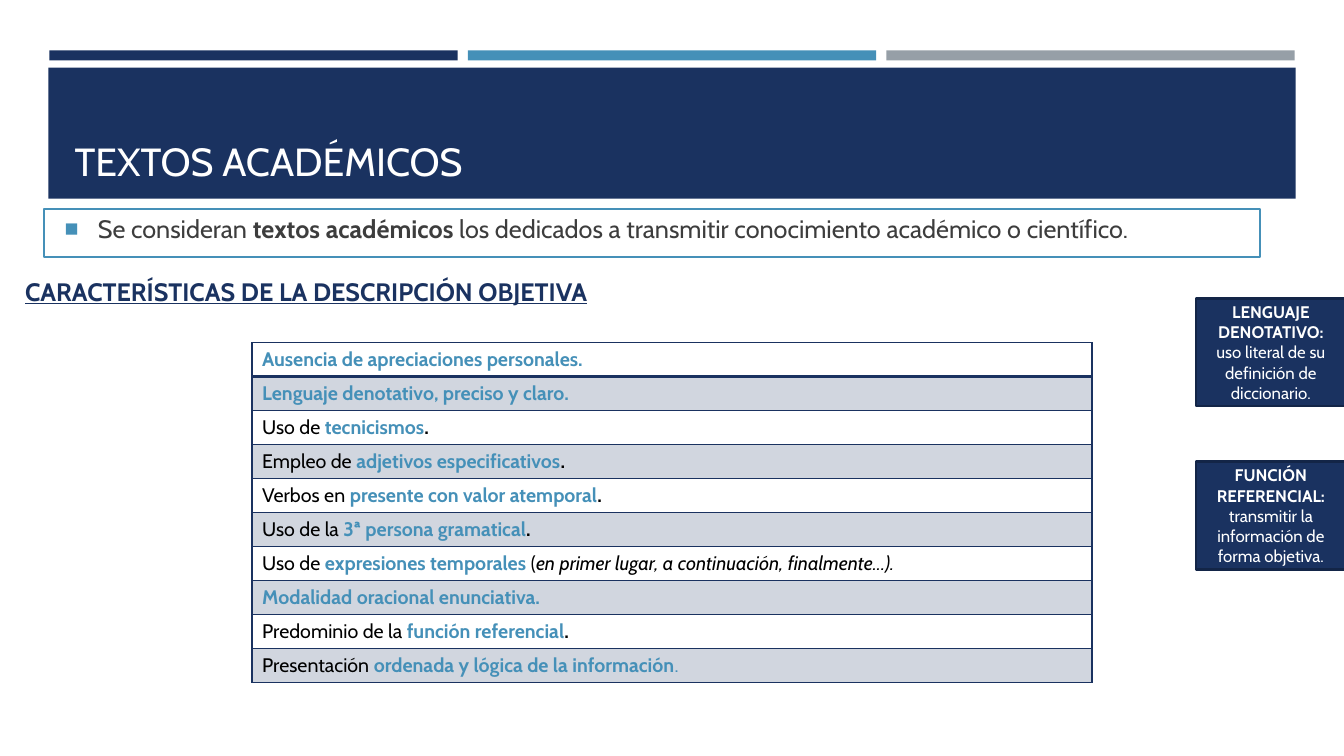
from lxml import etree
from pptx import Presentation
from pptx.dml.color import RGBColor
from pptx.enum.shapes import MSO_SHAPE as Shape
from pptx.enum.text import MSO_ANCHOR as Anchor, MSO_AUTO_SIZE as AutoSize, PP_ALIGN as Align
from pptx.oxml.ns import qn
from pptx.util import Inches, Pt

NAVY = RGBColor(0x1A, 0x32, 0x60)
DARK_NAVY = RGBColor(0x13, 0x25, 0x47)
BLUE = RGBColor(0x45, 0x90, 0xB8)
GRAY = RGBColor(0x96, 0x9F, 0xA7)
BAND = RGBColor(0xD1, 0xD6, 0xDF)
TEXT = RGBColor(0x3D, 0x3D, 0x3D)
BLACK = RGBColor(0, 0, 0)
WHITE = RGBColor(0xFF, 0xFF, 0xFF)

# Table wording: each run is (text, style name)
STYLES = {
    "plain": dict(color=BLACK),
    "key": dict(color=BLUE, bold=True),
    "stop": dict(color=BLACK, bold=True),
    "example": dict(color=BLACK, italic=True),
    "light": dict(color=BLUE),
}
FEATURES = [
    [("Ausencia de apreciaciones personales.", "key")],
    [("Lenguaje denotativo, preciso y claro.", "key")],
    [("Uso de ", "plain"), ("tecnicismos", "key"), (".", "stop")],
    [("Empleo de ", "plain"), ("adjetivos especificativos", "key"), (".", "stop")],
    [("Verbos en ", "plain"), ("presente con valor atemporal", "key"), (".", "stop")],
    [("Uso de la ", "plain"), ("3ª persona gramatical", "key"), (".", "stop")],
    [("Uso de ", "plain"), ("expresiones temporales ", "key"), ("(", "plain"),
     ("en primer lugar, a continuación, finalmente...).", "example")],
    [("Modalidad oracional enunciativa.", "key")],
    [("Predominio de la ", "plain"), ("función referencial", "key"), (".", "stop")],
    [("Presentación ", "plain"), ("ordenada y lógica de la información", "key"), (".", "light")],
]
CALLOUTS = [
    ("LENGUAJE DENOTATIVO:", " uso literal de su definición de diccionario."),
    ("FUNCIÓN REFERENCIAL:", " transmitir la información de forma objetiva."),
]


def add_text(paragraph, text, size=14, color=BLACK, bold=False, italic=False,
             underline=False, font="Cabin"):
    run = paragraph.add_run()
    run.text = text
    run.font.name = font
    run.font.size = Pt(size)
    run.font.color.rgb = color
    run.font.bold = bold
    run.font.italic = italic
    run.font.underline = underline


class SlideBuilder:
    def __init__(self, slide):
        self.slide = slide
        self.shapes = slide.shapes

    def shape(self, box, kind=Shape.RECTANGLE, fill=None, line=None, width=1.5):
        shape = self.shapes.add_shape(kind, *map(Inches, box))
        shape.shadow.inherit = False
        if fill is None:
            shape.fill.background()
        else:
            shape.fill.solid()
            shape.fill.fore_color.rgb = fill
        if line is None:
            shape.line.fill.background()
        else:
            shape.line.color.rgb = line
            shape.line.width = Pt(width)
        return shape

    def placeholder(self, index, box, anchor):
        """Place a placeholder above the shapes drawn so far."""
        shape = self.slide.placeholders[index]
        shape.left, shape.top, shape.width, shape.height = map(Inches, box)
        frame = shape.text_frame
        frame.word_wrap = True
        frame.auto_size = AutoSize.NONE
        frame.vertical_anchor = anchor
        self.shapes._spTree.append(shape._element)
        paragraph = frame.paragraphs[0]
        paragraph.alignment = Align.LEFT
        return paragraph

    def bullet(self, paragraph, indent, color):
        properties = paragraph._p.get_or_add_pPr()
        properties.set("marL", str(Inches(indent)))
        properties.set("indent", str(-Inches(indent)))
        bullet_color = etree.SubElement(properties, qn("a:buClr"))
        etree.SubElement(bullet_color, qn("a:srgbClr"), val=str(color))
        etree.SubElement(properties, qn("a:buSzPct"), val="92000")
        etree.SubElement(properties, qn("a:buFont"), typeface="Arial")
        etree.SubElement(properties, qn("a:buChar"), char="■")

    def heading(self, box, text):
        frame = self.shapes.add_textbox(*map(Inches, box)).text_frame
        frame.word_wrap = True
        add_text(frame.paragraphs[0], text, size=18, color=NAVY, bold=True, underline=True)

    def callout(self, box, term, meaning):
        shape = self.shape(box, Shape.FOLDED_CORNER, NAVY, DARK_NAVY, 1.75)
        # Flatten the folded corner
        guides = next(shape._element.iter(qn("a:avLst")))
        etree.SubElement(guides, qn("a:gd"), name="adj", fmla="val 0")
        frame = shape.text_frame
        frame.word_wrap = True
        frame.vertical_anchor = Anchor.MIDDLE
        paragraph = frame.paragraphs[0]
        paragraph.alignment = Align.CENTER
        add_text(paragraph, term, size=12, color=WHITE, bold=True)
        add_text(paragraph, meaning, size=12, color=WHITE)

    def borders(self, cell, top, bottom):
        properties = cell._tc.get_or_add_tcPr()
        sides = [("a:lnL", 1), ("a:lnR", 1), ("a:lnT", top), ("a:lnB", bottom)]
        for position, (side, width) in enumerate(sides):
            line = etree.Element(qn(side), w=str(Pt(width)))
            fill = etree.SubElement(line, qn("a:solidFill"))
            etree.SubElement(fill, qn("a:srgbClr"), val=str(NAVY))
            properties.insert(position, line)

    def table(self, box, rows):
        table = self.shapes.add_table(len(rows), 1, *map(Inches, box)).table
        table.first_row = table.horz_banding = False
        for number, runs in enumerate(rows):
            cell = table.cell(number, 0)
            if number % 2:
                cell.fill.solid()
                cell.fill.fore_color.rgb = BAND
            else:
                cell.fill.background()
            # The first row is closed by a thicker rule
            self.borders(cell, 2 if number == 1 else 1, 2 if number == 0 else 1)
            for text, style in runs:
                add_text(cell.text_frame.paragraphs[0], text, **STYLES[style])


def main():
    presentation = Presentation()
    presentation.slide_width = Inches(13.33)
    presentation.slide_height = Inches(7.5)
    builder = SlideBuilder(presentation.slides.add_slide(presentation.slide_layouts[1]))

    # Header bars and title band
    for column, color in enumerate((NAVY, BLUE, GRAY)):
        builder.shape((0.49 + 4.15 * column, 0.5, 4.05, 0.1), fill=color)
    builder.shape((0.48, 0.67, 12.37, 1.3), fill=NAVY)
    title = builder.placeholder(0, (0.64, 0.77, 12.06, 1.11), Anchor.BOTTOM)
    add_text(title, "TEXTOS ACADÉMICOS", size=28, color=WHITE)

    # Framed definition
    definition = builder.placeholder(1, (0.54, 2.07, 12.06, 0.48), Anchor.TOP)
    definition.space_before = Pt(0)
    definition.space_after = Pt(6)
    builder.bullet(definition, 0.33, BLUE)
    add_text(definition, "Se consideran ", size=18, color=TEXT)
    add_text(definition, "textos académicos", size=18, color=TEXT, bold=True)
    add_text(definition, " los dedicados a transmitir conocimiento académico o científico.",
             size=18, color=TEXT)
    builder.shape((0.44, 2.07, 12.06, 0.48), line=BLUE)

    # Features table
    builder.table((2.5, 3.4, 8.33, 3.33), FEATURES)
    builder.heading((0.15, 2.69, 6.8, 0.4), "CARACTERÍSTICAS DE LA DESCRIPCIÓN OBJETIVA")

    # Side notes
    for number, (term, meaning) in enumerate(CALLOUTS):
        builder.callout((11.86, 2.96 + 1.62 * number, 1.49, 1.07), term, meaning)

    presentation.save("out.pptx")


if __name__ == "__main__":
    main()
